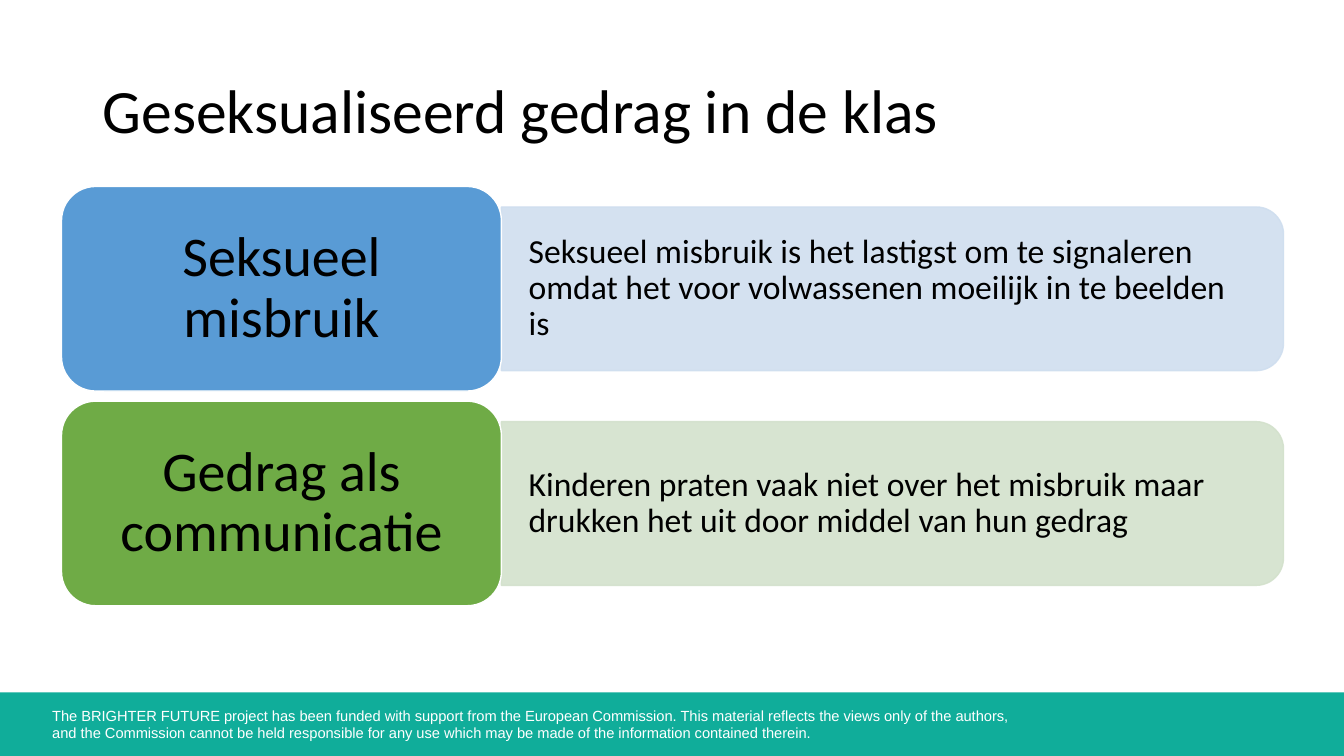
from lxml.etree import SubElement
from pptx import Presentation
from pptx.dml.color import RGBColor
from pptx.enum.shapes import MSO_SHAPE
from pptx.enum.text import MSO_ANCHOR, MSO_AUTO_SIZE, PP_ALIGN
from pptx.oxml.ns import qn
from pptx.util import Inches, Pt

BLACK = RGBColor(0x00, 0x00, 0x00)
WHITE = RGBColor(0xFF, 0xFF, 0xFF)
TEAL = RGBColor(0x10, 0xAD, 0x9A)
BLUE = RGBColor(0x59, 0x9B, 0xD5)
PALE_BLUE = RGBColor(0xCF, 0xDE, 0xEF)
GREEN = RGBColor(0x6F, 0xAB, 0x46)
PALE_GREEN = RGBColor(0xD3, 0xE1, 0xCC)

SLIDE_W, SLIDE_H = 13.33, 7.5
ROW_H, ROW_PITCH = 2.03, 2.13
LABEL_SHARE, PANEL_SHARE = 0.36, 0.8
CORNER = 0.167

TITLE = "Geseksualiseerd gedrag in de klas"
ROWS = [
    ("Seksueel misbruik",
     "Seksueel misbruik is het lastigst om te signaleren omdat het voor "
     "volwassenen moeilijk in te beelden is", BLUE, PALE_BLUE),
    ("Gedrag als communicatie",
     "Kinderen praten vaak niet over het misbruik maar drukken het uit door "
     "middel van hun gedrag", GREEN, PALE_GREEN),
]
FUNDING = [
    "The BRIGHTER FUTURE project has been funded with support from the European "
    "Commission. This material reflects the views only of the authors,",
    "and the Commission cannot be held responsible for any use which may be made "
    "of the information contained therein.",
]


def write(sp, lines, size, color=BLACK, font="Calibri", align=PP_ALIGN.LEFT,
          anchor=MSO_ANCHOR.MIDDLE, spacing=0.9, insets=(0.1, 0.05)):
    """Fill a shape with one paragraph, breaking between the given lines."""
    tf = sp.text_frame
    tf.word_wrap = True
    tf.auto_size = MSO_AUTO_SIZE.NONE
    tf.vertical_anchor = anchor
    tf.margin_left = tf.margin_right = Inches(insets[0])
    tf.margin_top = tf.margin_bottom = Inches(insets[1])
    p = tf.paragraphs[0]
    p.alignment = align
    p.line_spacing = spacing
    for i, line in enumerate(lines):
        if i:
            p.add_line_break()
        r = p.add_run()
        r.text = line
        r.font.name = font
        r.font.size = Pt(size)
        r.font.color.rgb = color


def add_box(s, kind, box, fill, line=None, alpha=None):
    """Add a flat filled preset shape, optionally outlined and translucent."""
    sp = s.shapes.add_shape(kind, *map(Inches, box))
    sp.shadow.inherit = False
    sp.fill.solid()
    sp.fill.fore_color.rgb = fill
    if line is None:
        sp.line.fill.background()
    else:
        sp.line.color.rgb = line
        sp.line.width = Pt(1)
    if alpha is not None:
        for clr in sp.element.spPr.iter(qn("a:srgbClr")):
            SubElement(clr, qn("a:alpha"), val=str(alpha * 1000))
    return sp


def add_footer(s, box):
    """Draw the funding strip at the foot of the slide."""
    x, y, w, h = box
    add_box(s, MSO_SHAPE.RECTANGLE, box, TEAL)
    note = s.shapes.add_textbox(*map(Inches, (x + 0.42, y + 0.09, w * 0.75, 0.45)))
    write(note, FUNDING, 10.5, WHITE, "Arial", anchor=MSO_ANCHOR.TOP, spacing=1.0)


def add_title(s, box):
    """Place and fill the title placeholder."""
    sp = s.shapes.title
    sp.left, sp.top, sp.width, sp.height = map(Inches, box)
    write(sp, [TITLE], 44)


def add_row(s, box, label, detail, strong, pale):
    """Draw a label block with its explanation panel to the right."""
    x, y, w, h = box
    label_w, panel_h = w * LABEL_SHARE, h * PANEL_SHARE
    panel_x, panel_y, panel_w = x + label_w, y + (h - panel_h) / 2, w - label_w
    turned = (panel_x + (panel_w - panel_h) / 2, panel_y + (panel_h - panel_w) / 2,
              panel_h, panel_w)
    panel = add_box(s, MSO_SHAPE.ROUND_2_SAME_RECTANGLE, turned, pale, pale, 89)
    panel.rotation = 90
    panel.adjustments[0], panel.adjustments[1] = CORNER, 0
    text_box = (panel_x, panel_y + panel_h * 0.05, panel_w - 0.1, panel_h * 0.9)
    text = s.shapes.add_textbox(*map(Inches, text_box))
    write(text, [detail], 24, insets=(0.27, 0.14))
    block = add_box(s, MSO_SHAPE.ROUNDED_RECTANGLE, (x, y, label_w, h), strong, WHITE)
    block.adjustments[0] = CORNER
    write(block, [label], 40, align=PP_ALIGN.CENTER, insets=(0.2, 0.1))


def main():
    """Build and save the slide."""
    prs = Presentation()
    prs.slide_width, prs.slide_height = Inches(SLIDE_W), Inches(SLIDE_H)
    s = prs.slides.add_slide(prs.slide_layouts[5])
    add_footer(s, (0, 6.87, SLIDE_W, SLIDE_H - 6.87))
    add_title(s, (0.92, 0.4, 11.5, 1.45))
    for i, row in enumerate(ROWS):
        add_row(s, (0.61, 1.85 + i * ROW_PITCH, 12.12, ROW_H), *row)
    prs.save("out.pptx")


if __name__ == "__main__":
    main()
